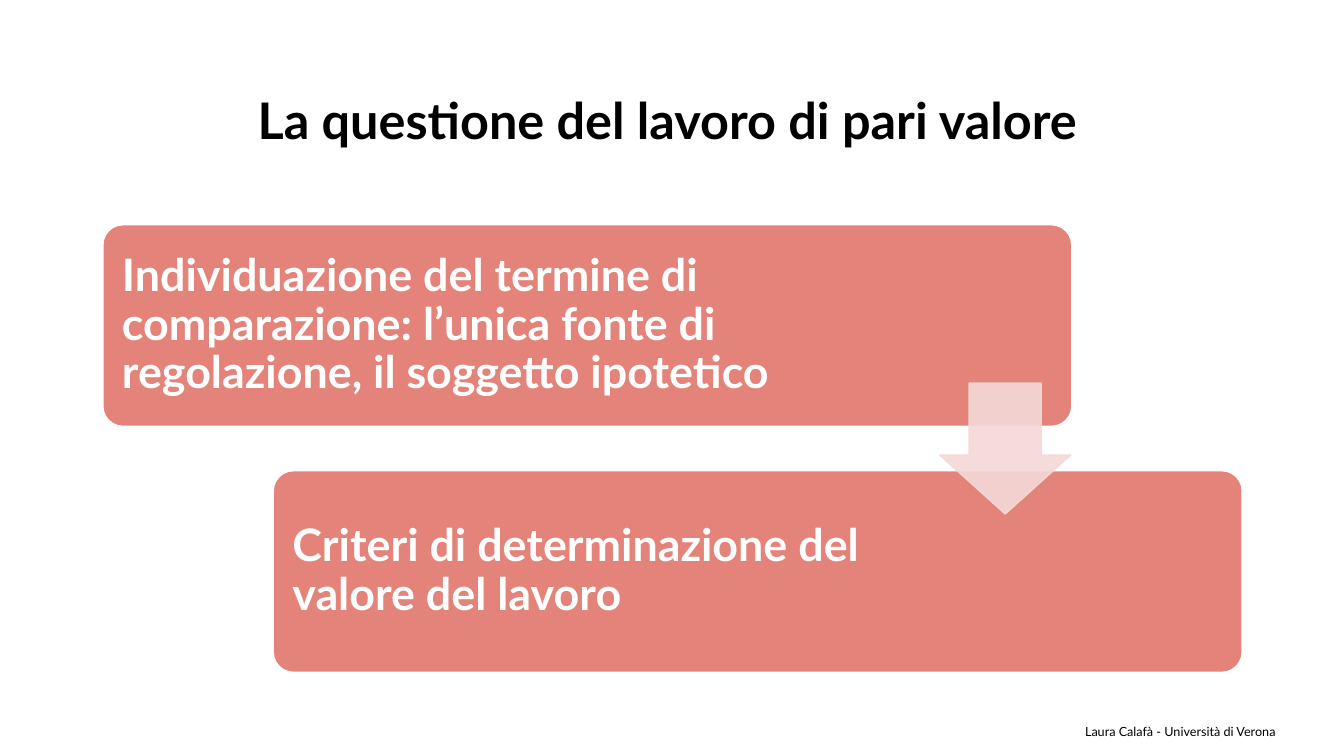
from lxml.etree import SubElement
from pptx import Presentation
from pptx.dml.color import RGBColor
from pptx.enum.shapes import MSO_SHAPE as Shape
from pptx.enum.text import MSO_ANCHOR as Anchor, PP_ALIGN as Align
from pptx.oxml.ns import qn
from pptx.util import Inches, Pt

HUES = {"black": "000000", "white": "FFFFFF", "coral": "E38379", "blush": "F4D9D7"}
STEPS = [
    ("Individuazione del termine di comparazione: l’unica fonte di "
     "regolazione, il soggetto ipotetico", 7.54),
    ("Criteri di determinazione del valore del lavoro", 6.49),
]


def hue(name):
    """Return a palette colour."""
    return RGBColor.from_string(HUES[name])


def assign(item, values):
    """Set each named attribute on an item."""
    for key, value in values.items():
        setattr(item, key, value)


def add_text(slide, box, text, font, tone, para, inset=(0.1, 0.05)):
    """Add a wrapped text box, centred vertically."""
    frame = slide.shapes.add_textbox(*map(Inches, box)).text_frame
    side, edge = map(Inches, inset)
    assign(frame, {"word_wrap": True, "vertical_anchor": Anchor.MIDDLE,
                   "margin_left": side, "margin_right": side,
                   "margin_top": edge, "margin_bottom": edge})
    line = frame.paragraphs[0]
    assign(line, para)
    run = line.add_run()
    run.text = text
    assign(run.font, {"name": "Lato", **font})
    run.font.color.rgb = hue(tone)


def add_form(slide, kind, box, ratios, fill, edge, alpha=None):
    """Add a preset shape with a thin outline and optional opacity."""
    form = slide.shapes.add_shape(kind, *map(Inches, box))
    form.shadow.inherit = False
    for spot, ratio in enumerate(ratios):
        form.adjustments[spot] = ratio
    form.line.width = Pt(1)
    for paint, name in ((form.fill, fill), (form.line.fill, edge)):
        paint.solid()
        paint.fore_color.rgb = hue(name)
    if alpha:
        for node in form._element.spPr.findall(".//" + qn("a:srgbClr")):
            SubElement(node, qn("a:alpha"), val=str(alpha * 1000))


def add_step(slide, left, top, text, width):
    """Add a rounded panel with its bold caption."""
    add_form(slide, Shape.ROUNDED_RECTANGLE, (left, top, 9.61, 2), [0.1], "coral", "white")
    add_text(slide, (left + 0.06, top + 0.06, width, 1.88), text,
             {"size": Pt(32), "bold": True}, "white",
             {"alignment": Align.LEFT, "line_spacing": 0.9}, (0.13, 0.13))


def main():
    """Build and save the slide."""
    deck = Presentation()
    assign(deck, {"slide_width": Inches(13.33), "slide_height": Inches(7.5)})
    slide = deck.slides.add_slide(deck.slide_layouts[6])
    add_text(slide, (1.67, 0.6, 10.02, 1.24), "La questione del lavoro di pari valore ",
             {"size": Pt(36), "bold": True}, "black",
             {"alignment": Align.CENTER, "line_spacing": 0.9})
    add_text(slide, (9.71, 7.06, 3.07, 0.4), "Laura Calafà - Università di Verona ",
             {"size": Pt(9)}, "black", {"alignment": Align.RIGHT})
    for rank, (text, width) in enumerate(STEPS):
        add_step(slide, 1.02 + 1.69 * rank, 2.23 + 2.44 * rank, text, width)
    add_form(slide, Shape.DOWN_ARROW, (9.32, 3.8, 1.3, 1.3), [0.55, 0.45],
             "blush", "blush", 90)
    deck.save("out.pptx")


if __name__ == "__main__":
    main()
